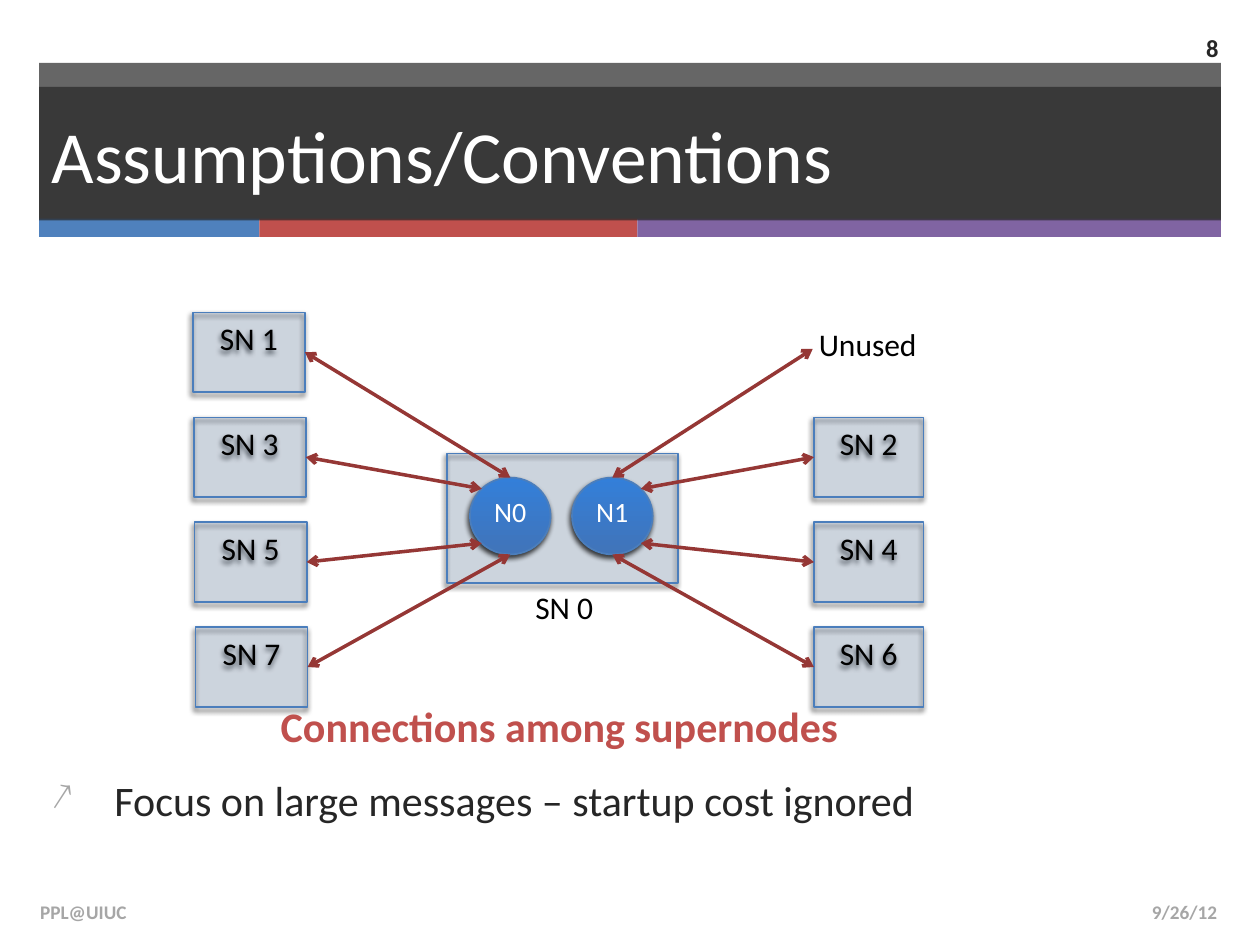
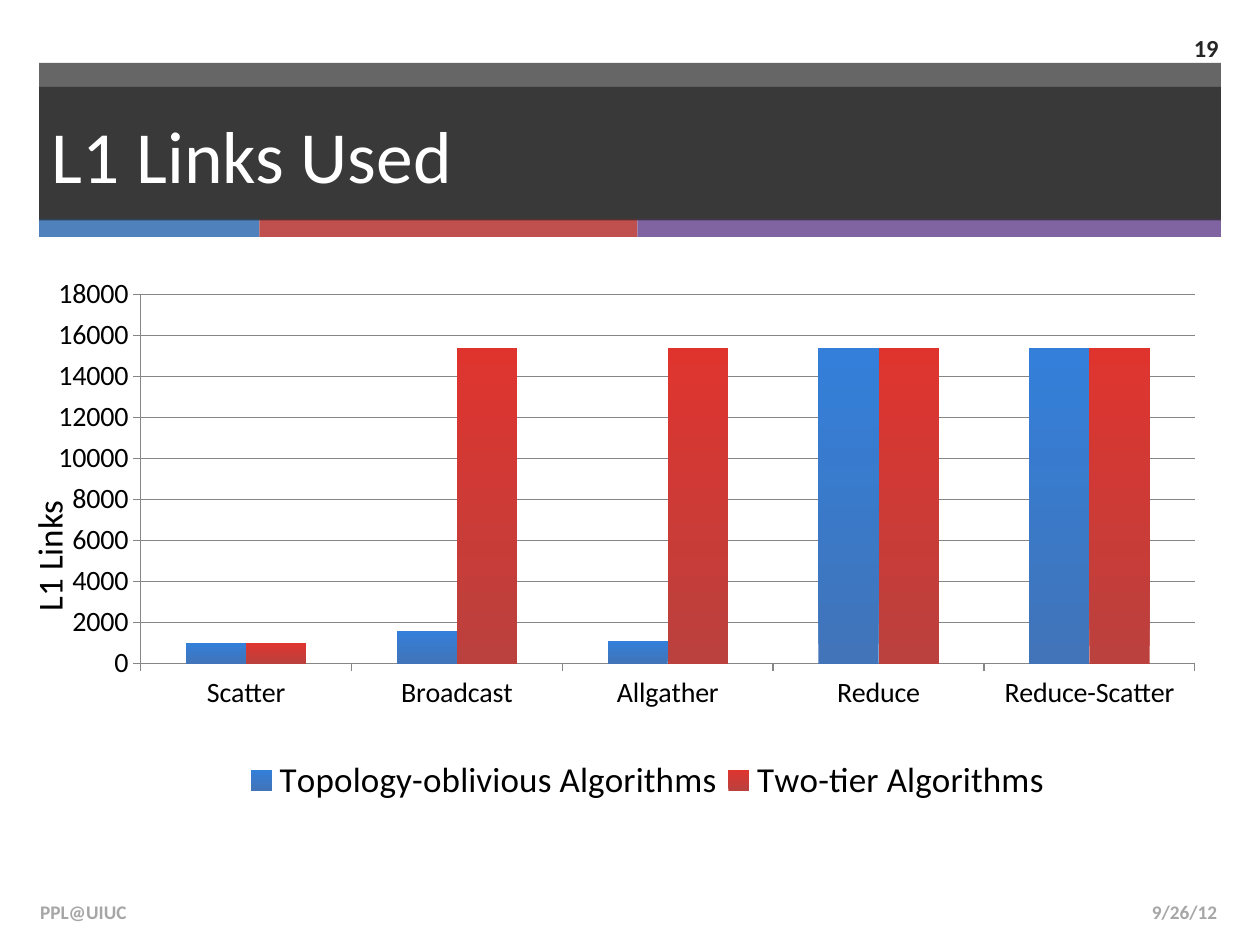
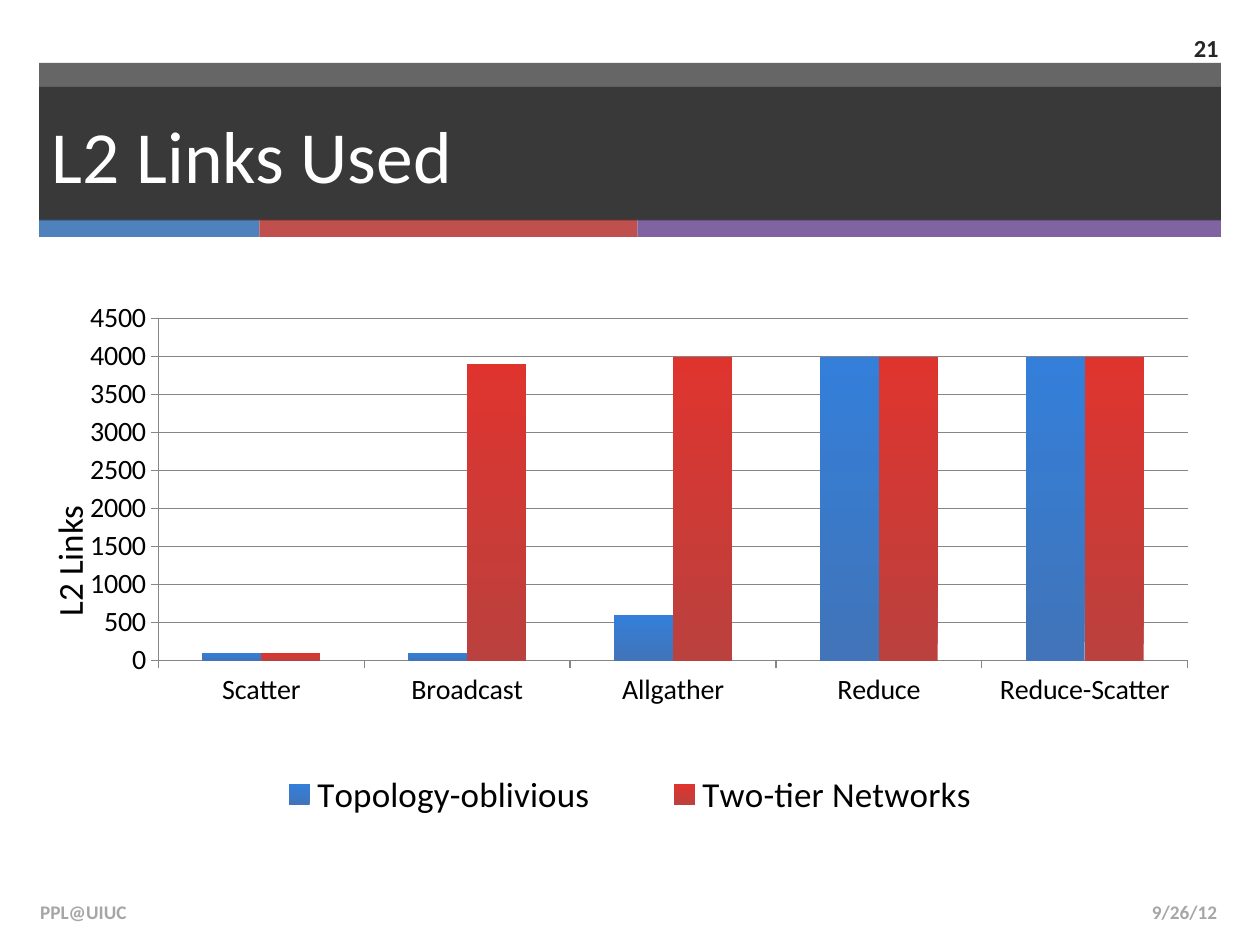
import math

from lxml import etree
from pptx import Presentation, util as u
from pptx.chart.data import CategoryChartData
from pptx.dml.color import RGBColor
from pptx.enum import chart as ch, shapes as sh, text as tx
from pptx.oxml.ns import qn

# The grid has 100 columns and 75 rows of square cells.
COLS, ROWS = 100, 75
WIDTH, HEIGHT = u.Inches(10), u.Inches(7.5)
CELL = WIDTH // COLS

FONT = "Calibri"
WHITE, BLACK, DARK, PALE = "FFFFFF", "000000", "262626", "A6A6A6"
BLUE, RED, PURPLE = "4F81BD", "C0504D", "8064A2"
EDGE, ARROW, GRID = "4B7EBC", "953735", "868686"
BLUES, REDS = ("4174B9", "337FD9"), ("BB413E", "DF342E")

LEFT, MID, RIGHT = tx.PP_ALIGN.LEFT, tx.PP_ALIGN.CENTER, tx.PP_ALIGN.RIGHT
TOP, CENTRE = tx.MSO_ANCHOR.TOP, tx.MSO_ANCHOR.MIDDLE
RECT, OVAL = sh.MSO_SHAPE.RECTANGLE, sh.MSO_SHAPE.OVAL

MAIN = (3.1, 0, 93.8)  # left, top and width of the shared column
CATS = ["Scatter", "Broadcast", "Allgather", "Reduce", "Reduce-Scatter"]


def rgb(code):
    return RGBColor.from_string(code)


def cells(*nums):
    return [round(n * CELL) for n in nums]


def add(parent, tag, **attrs):
    node = etree.SubElement(parent, qn(tag))
    for key, val in attrs.items():
        node.set(key, str(val))
    return node


def style(target, values):
    for key, val in values.items():
        setattr(target, key, val)


def write(shape, words, size, color, bold=False, align=LEFT, anchor=TOP, wrap=True):
    frame = shape.text_frame
    style(frame, dict(text=words, word_wrap=wrap, vertical_anchor=anchor))
    para = frame.paragraphs[0]
    para.alignment = align
    font = para.runs[0].font
    style(font, dict(size=u.Pt(size), name=FONT, bold=bold))
    font.color.rgb = rgb(color)
    return para


def label(slide, box, words, size, color, **look):
    shape = slide.shapes.add_textbox(*cells(*box))
    return shape, write(shape, words, size, color, **look)


def paint(shape, color, alpha=100):
    shape.fill.solid()
    shape.fill.fore_color.rgb = rgb(color)
    if alpha < 100:
        tint = shape._element.spPr.find(".//" + qn("a:srgbClr"))
        add(tint, "a:alpha", val=alpha * 1000)


def fade(fill, pair):
    """Fill with a gradient from the first colour at the foot to the second."""
    fill.gradient()
    fill.gradient_angle = 90
    for stop, color in zip(fill.gradient_stops, pair):
        stop.color.rgb = rgb(color)


def plain(slide, box, color, alpha=100):
    shape = slide.shapes.add_shape(RECT, *cells(*box))
    shape.shadow.inherit = False
    shape.line.fill.background()
    paint(shape, color, alpha)


def raised(slide, kind, box):
    """Add an outlined shape with a soft shadow."""
    shape = slide.shapes.add_shape(kind, *cells(*box))
    shape.line.color.rgb = rgb(EDGE)
    shape.line.width = u.Pt(1)
    if kind == OVAL:
        fade(shape.fill, BLUES)
    else:
        paint(shape, BLUE, 15)
    shape.shadow.inherit = False
    glow = add(shape._element.spPr.find(qn("a:effectLst")), "a:outerShdw",
               blurRad=u.Pt(3), dist=u.Pt(2), dir=110 * 60000, rotWithShape=0)
    add(add(glow, "a:srgbClr", val=BLACK), "a:alpha", val=75000)
    return shape


def link(slide, start, end):
    line = slide.shapes.add_connector(sh.MSO_CONNECTOR.STRAIGHT, *cells(*start, *end))
    line.line.color.rgb = rgb(ARROW)
    line.line.width = u.Pt(2)
    props = line._element.spPr
    for tip in ("a:headEnd", "a:tailEnd"):
        add(props.find(qn("a:ln")), tip, type="arrow")
    add(props, "a:effectLst")


def frame(deck, words, number):
    """Start a slide with its title band, stripes, footers and number."""
    slide = deck.slides.add_slide(deck.slide_layouts[5])
    left, _, width = MAIN
    plain(slide, (left, 5, width, 12.4), DARK, 70)
    for color, wide in ((BLUE, 17.5), (RED, 30), (PURPLE, 46.3)):
        plain(slide, (left, 17.35, wide, 1.45), color)
        left += wide

    title = slide.shapes.title
    title._element.getparent().append(title._element)
    spot = cells(MAIN[0], 6.9, width, 10.6)
    style(title, dict(zip(("left", "top", "width", "height"), spot)))
    paint(title, DARK, 70)
    write(title, words, 42, WHITE, anchor=CENTRE)

    foot = dict(bold=True, anchor=CENTRE)
    label(slide, (74.3, 70.4, 23.3, 4), "9/26/12", 11, PALE, align=RIGHT, **foot)
    label(slide, (2.2, 70.4, 67, 4), "PPL@UIUC", 11, PALE, **foot)
    label(slide, (90.8, 1.8, 6.9, 3.9), str(number), 14, DARK, align=RIGHT, **foot)
    return slide


def bullet(slide, box, words):
    _, para = label(slide, box, words, 24, DARK)
    para.space_before = u.Pt(20)
    props = para._p.get_or_add_pPr()
    style_in = u.Inches(0.5)
    props.set("marL", str(style_in))
    props.set("indent", str(-style_in))
    add(add(props, "a:buClr"), "a:srgbClr", val=PALE)
    add(props, "a:buSzPct", val=90000)
    add(props, "a:buChar", char="↗")


def rim(box, angle):
    """Return the point of an oval at an angle in degrees."""
    x, y, w, h = box
    turn = math.radians(angle)
    return x + w / 2 * (1 + math.cos(turn)), y + h / 2 * (1 - math.sin(turn))


def network(slide, left, top):
    """Draw the supernodes around the two nodes of SN 0."""
    raised(slide, RECT, (left + 20.2, top + 11.2, 18.3, 10.3))
    nodes = [(left + 22 + 8.1 * i, top + 13.1, 6.4, 6.1) for i in range(2)]
    for i, box in enumerate(nodes):
        write(raised(slide, OVAL, box), f"N{i}", 16, WHITE, align=MID, wrap=False)

    tall, step = 6.3, 8.33
    west = [(left + 0.07 * i, top + step * i, 8.9, tall) for i in range(4)]
    east = [(left + 49.3, top + step * i, 8.7, tall) for i in range(1, 4)]
    names = [f"SN {n}" for n in (1, 3, 5, 7, 2, 4, 6)]
    for name, box in zip(names, west + east):
        write(raised(slide, RECT, box), name, 18, BLACK, align=MID)

    ends = [[(x + w, y + h / 2) for x, y, w, h in west],
            [(left + 49.2, top + 2.9)] + [(x, y + h / 2) for x, y, w, h in east]]
    turns = [(90, 135, 225, 270), (90, 45, -45, -90)]
    for node, points, angles in zip(nodes, ends, turns):
        for point, angle in zip(points, angles):
            link(slide, rim(node, angle), point)

    label(slide, (left + 48.7, top + 0.5, 9.9, 4), "Unused", 18, BLACK, wrap=False)
    label(slide, (left + 26.2, top + 21.4, 6.7, 4), "SN 0", 18, BLACK, wrap=False)
    label(slide, (left + 6, top + 30.3, 46.7, 5), "Connections among supernodes",
          24, RED, bold=True, wrap=False)


def arrange(part, index, shares, inner=False):
    """Fix a chart part at x, y, width and height shares of the chart."""
    for old in part.findall(qn("c:layout")):
        part.remove(old)
    layout = etree.Element(qn("c:layout"))
    part.insert(index, layout)
    manual = add(layout, "c:manualLayout")
    if inner:
        add(manual, "c:layoutTarget", val="inner")
    for mode in ("xMode", "yMode"):
        add(manual, "c:" + mode, val="edge")
    for key, val in zip("xywh", shares):
        add(manual, "c:" + key, val=val)


def bars(slide, box, series, plot, legend, top, unit):
    data = CategoryChartData()
    data.categories = CATS
    for name, vals in series:
        data.add_series(name, vals)
    chart = slide.shapes.add_chart(ch.XL_CHART_TYPE.COLUMN_CLUSTERED,
                                   *cells(*box), data).chart
    style(chart, dict(has_title=False, has_legend=True))
    style(chart.font, dict(size=u.Pt(16), name=FONT))
    chart.font.color.rgb = rgb(BLACK)

    style(chart.legend, dict(position=ch.XL_LEGEND_POSITION.BOTTOM,
                             include_in_layout=False))
    style(chart.legend.font, dict(size=u.Pt(20), name=FONT))
    arrange(chart.legend._element, 1, legend)
    arrange(chart._chartSpace.chart.plotArea, 0, plot, inner=True)

    style(chart.plots[0], dict(gap_width=150, overlap=0, vary_by_categories=False))
    for line, pair in zip(chart.plots[0].series, (BLUES, REDS)):
        fade(line.format.fill, pair)

    value, cat = chart.value_axis, chart.category_axis
    style(value, dict(minimum_scale=0, maximum_scale=top, major_unit=unit,
                      has_major_gridlines=True))
    for axis in (value, cat):
        axis.major_tick_mark = ch.XL_TICK_MARK.OUTSIDE
    for part in (value, cat, value.major_gridlines):
        part.format.line.color.rgb = rgb(GRID)
        part.format.line.width = u.Pt(0.75)


def side(slide, left, top, words):
    shape, _ = label(slide, (left, top, 12.8, 4.4), words, 20, BLACK)
    shape.rotation = 270


def main():
    deck = Presentation()
    style(deck, dict(slide_width=WIDTH, slide_height=HEIGHT))
    left, _, width = MAIN

    slide = frame(deck, "Assumptions/Conventions", 8)
    bullet(slide, (left, 61, width, 6), "Focus on large messages – startup cost ignored")
    network(slide, 15.3, 24.8)

    slide = frame(deck, "L1 Links Used", 19)
    bars(slide, (left, 21.7, width, 44.2),
         [("Topology-oblivious Algorithms", (1000, 1600, 1100, 15400, 15400)),
          ("Two-tier Algorithms", (1000, 15400, 15400, 15400, 15400))],
         (0.086, 0.038, 0.892, 0.663), (0.17, 0.86, 0.69, 0.1), 18000, 2000)
    side(slide, -2.5, 40.9, "L1 Links")

    slide = frame(deck, "L2 Links Used", 21)
    bars(slide, (left, 23.3, width, 43.7),
         [("Topology-oblivious", (100, 100, 600, 4000, 4000)),
          ("Two-tier Networks", (100, 3900, 4000, 4000, 4000))],
         (0.101, 0.046, 0.871, 0.621), (0.15, 0.86, 0.7, 0.1), 4500, 500)
    side(slide, -0.9, 41.3, "L2 Links")

    deck.save("out.pptx")


if __name__ == "__main__":
    main()
